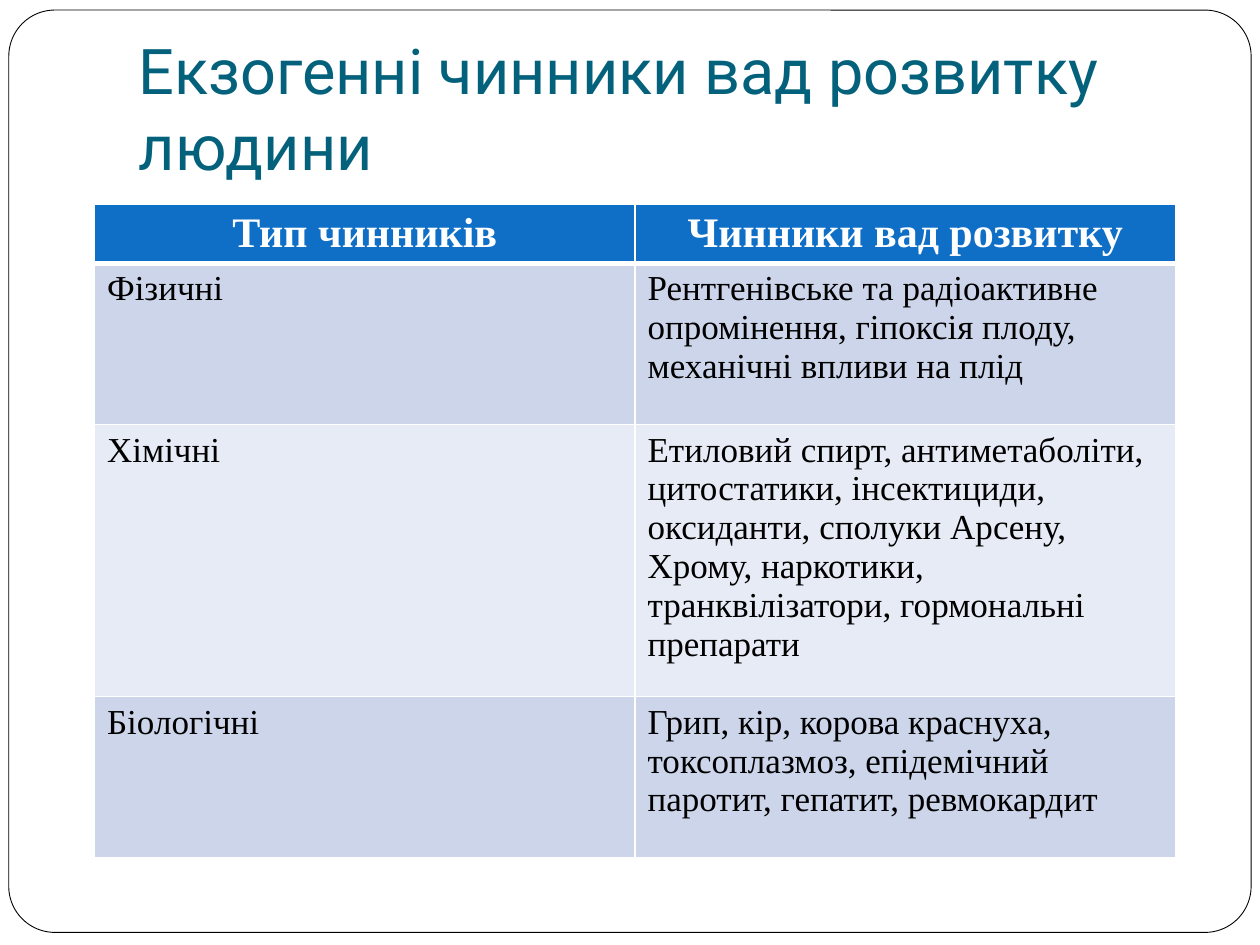
from dataclasses import dataclass

import pptx
import pptx.dml.color
import pptx.enum.shapes
import pptx.enum.text
import pptx.oxml
import pptx.oxml.ns
import pptx.util

RGBColor = pptx.dml.color.RGBColor
PP_ALIGN = pptx.enum.text.PP_ALIGN

WHITE = RGBColor(0xFF, 0xFF, 0xFF)
BLACK = RGBColor(0x00, 0x00, 0x00)
TITLE_TEAL = RGBColor(0x04, 0x61, 0x7B)
HEADER_BLUE = RGBColor(0x0F, 0x6F, 0xC6)
BAND_DARK = RGBColor(0xCC, 0xD5, 0xEA)
BAND_LIGHT = RGBColor(0xE7, 0xEB, 0xF5)

SLIDE_WIDTH = pptx.util.Inches(10)
SLIDE_HEIGHT = pptx.util.Inches(7.5)
TITLE_ONLY_LAYOUT = 5
THIN_BORDER, THICK_BORDER = 1, 3


@dataclass(frozen=True)
class Box:
    """A rectangle in shares of the slide's width and height."""
    left: float
    top: float
    width: float
    height: float

    def lengths(self) -> tuple[int, int, int, int]:
        return (int(self.left * SLIDE_WIDTH), int(self.top * SLIDE_HEIGHT),
                int(self.width * SLIDE_WIDTH), int(self.height * SLIDE_HEIGHT))


@dataclass(frozen=True)
class RowStyle:
    fill: RGBColor
    text_color: RGBColor
    size: int
    bold: bool
    alignment: PP_ALIGN
    top_border: int = THIN_BORDER
    bottom_border: int = THIN_BORDER


@dataclass(frozen=True)
class FactorRow:
    height: float  # inches
    texts: tuple[str, str]
    style: RowStyle


FRAME_BOX = Box(0.007, 0.08 / 7.5, 0.986, 7.32 / 7.5)
TITLE_BOX = Box(0.1, 0.04, 0.85, 1.25 / 7.5)
TABLE_BOX = Box(0.075, 0.216, 0.858, 0.69)

HEADER = RowStyle(HEADER_BLUE, WHITE, 24, True, PP_ALIGN.CENTER, bottom_border=THICK_BORDER)
FIRST_BAND = RowStyle(BAND_DARK, BLACK, 20, False, PP_ALIGN.LEFT, top_border=THICK_BORDER)
LIGHT_BAND = RowStyle(BAND_LIGHT, BLACK, 20, False, PP_ALIGN.LEFT)
DARK_BAND = RowStyle(BAND_DARK, BLACK, 20, False, PP_ALIGN.LEFT)

FACTOR_ROWS = [
    FactorRow(0.46, ("Тип чинників", "Чинники вад розвитку"), HEADER),
    FactorRow(1.28, ("Фізичні", "Рентгенівське та радіоактивне опромінення, гіпоксія плоду, "
                     "механічні впливи на плід"), FIRST_BAND),
    FactorRow(2.16, ("Хімічні", "Етиловий спирт, антиметаболіти, цитостатики, інсектициди, "
                     "оксиданти, сполуки Арсену, Хрому, наркотики, транквілізатори, "
                     "гормональні препарати"), LIGHT_BAND),
    FactorRow(1.28, ("Біологічні", "Грип, кір, корова краснуха, токсоплазмоз, епідемічний "
                     "паротит, гепатит, ревмокардит"), DARK_BAND),
]


def format_paragraph(paragraph, font_name: str, size: int, color: RGBColor,
                     bold: bool, alignment: PP_ALIGN) -> None:
    paragraph.alignment = alignment
    for run in paragraph.runs:
        run.font.name = font_name
        run.font.size = pptx.util.Pt(size)
        run.font.bold = bold
        run.font.color.rgb = color


def add_border(cell, side: str, points: int) -> None:
    cell_properties = cell._tc.get_or_add_tcPr()
    cell_properties.append(pptx.oxml.parse_xml(
        f'<a:ln{side} {pptx.oxml.ns.nsdecls("a")} w="{pptx.util.Pt(points)}">'
        f'<a:solidFill><a:srgbClr val="{WHITE}"/></a:solidFill></a:ln{side}>'))


def fill_cell(cell, text: str, style: RowStyle) -> None:
    cell.text_frame.text = text
    format_paragraph(cell.text_frame.paragraphs[0], "Times New Roman", style.size,
                     style.text_color, style.bold, style.alignment)
    borders = {"L": THIN_BORDER, "R": THIN_BORDER,
               "T": style.top_border, "B": style.bottom_border}
    for side, points in borders.items():
        add_border(cell, side, points)
    cell.fill.solid()
    cell.fill.fore_color.rgb = style.fill


def add_frame(slide) -> None:
    frame = slide.shapes.add_shape(
        pptx.enum.shapes.MSO_SHAPE.ROUNDED_RECTANGLE, *FRAME_BOX.lengths())
    frame.adjustments[0] = 0.05
    frame.shadow.inherit = False
    frame.fill.solid()
    frame.fill.fore_color.rgb = WHITE
    frame.line.color.rgb = BLACK
    frame.line.width = pptx.util.Pt(0.5)


def add_factor_table(slide):
    graphic_frame = slide.shapes.add_table(len(FACTOR_ROWS), 2, *TABLE_BOX.lengths())
    table = graphic_frame.table
    for row, factor in zip(table.rows, FACTOR_ROWS):
        row.height = pptx.util.Inches(factor.height)
        for cell, text in zip(row.cells, factor.texts):
            fill_cell(cell, text, factor.style)
    return graphic_frame


def format_title(title) -> None:
    title.left, title.top, title.width, title.height = TITLE_BOX.lengths()
    text_frame = title.text_frame
    text_frame.text = "Екзогенні чинники вад розвитку людини"
    text_frame.word_wrap = True
    text_frame.auto_size = pptx.enum.text.MSO_AUTO_SIZE.NONE
    text_frame.vertical_anchor = pptx.enum.text.MSO_ANCHOR.BOTTOM
    text_frame.margin_bottom = pptx.util.Inches(0.1)
    format_paragraph(text_frame.paragraphs[0], "Roboto", 36, TITLE_TEAL, False, PP_ALIGN.LEFT)


def main() -> None:
    presentation = pptx.Presentation()
    presentation.slide_width = SLIDE_WIDTH
    presentation.slide_height = SLIDE_HEIGHT
    slide = presentation.slides.add_slide(presentation.slide_layouts[TITLE_ONLY_LAYOUT])

    # Rounded frame at the back, then the table
    add_frame(slide)
    table_frame = add_factor_table(slide)

    # Title, brought in front of the filled frame
    title = slide.shapes.title
    format_title(title)
    table_frame.element.addnext(title.element)

    presentation.save("out.pptx")


if __name__ == "__main__":
    main()
